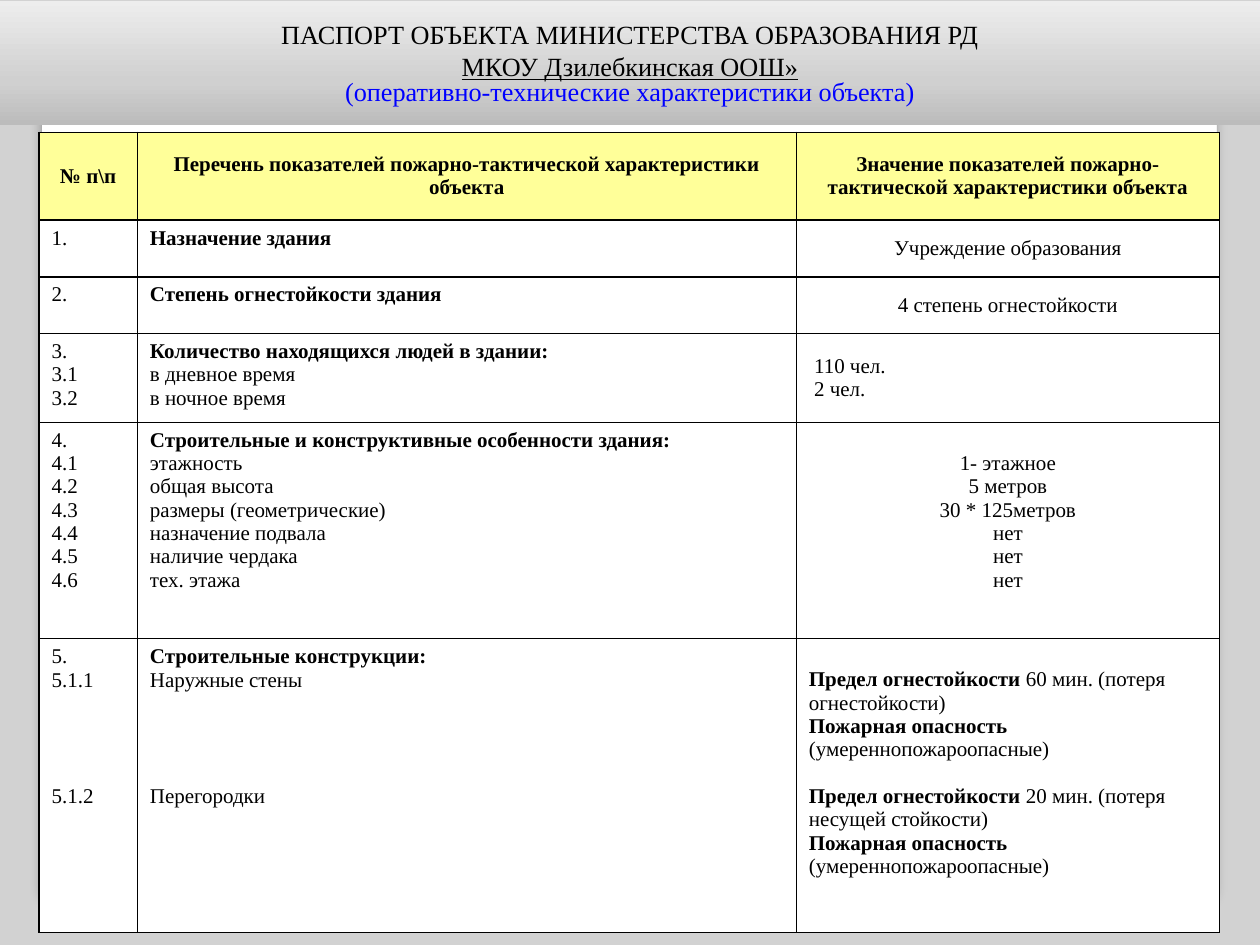
from pptx import Presentation
from pptx.dml.color import RGBColor
from pptx.enum.shapes import MSO_SHAPE
from pptx.enum.text import MSO_ANCHOR, PP_ALIGN
from pptx.oxml import parse_xml
from pptx.oxml.ns import nsdecls, qn
from pptx.util import Inches, Pt

BLACK = RGBColor(0, 0, 0)
WHITE = RGBColor(255, 255, 255)
BLUE = RGBColor(0, 0, 255)
YELLOW = RGBColor(255, 255, 153)
GREY = RGBColor(210, 210, 210)
EDGE = RGBColor(164, 164, 164)
PANEL = [(0, WHITE), (98, WHITE), (99, RGBColor(247, 247, 247)), (100, RGBColor(218, 218, 218))]
BAND = [(0, RGBColor(188, 188, 188)), (35, RGBColor(208, 208, 208)), (100, RGBColor(237, 237, 237))]
LEFT, MID, TOP = PP_ALIGN.LEFT, PP_ALIGN.CENTER, MSO_ANCHOR.TOP
CORE = MSO_ANCHOR.MIDDLE

COLS = [0.078, 0.523, 0.336]
ROWS = [
    (0.093, ["|№ п\\п"], ["|Перечень показателей пожарно-тактической характеристики объекта"],
     ["|Значение показателей пожарно-тактической характеристики объекта"], MID, CORE),
    (0.06, ["1."], ["|Назначение здания"], ["Учреждение образования"], MID, CORE),
    (0.06, ["2."], ["|Степень огнестойкости здания"], ["4 степень огнестойкости"], MID, CORE),
    (0.094, ["3.", "3.1", "3.2"],
     ["|Количество находящихся людей в здании:", "в дневное время", "в ночное время"],
     [" 110 чел.", " 2 чел."], LEFT, CORE),
    (0.229, ["4.", "4.1", "4.2", "4.3", "4.4", "4.5", "4.6"],
     ["|Строительные и конструктивные особенности здания:", "этажность", "общая высота",
      "размеры (геометрические)", "назначение подвала", "наличие чердака", "тех. этажа"],
     ["^1- этажное", "5 метров", "30 * 125метров", "нет", "нет", "нет"], MID, TOP),
    (0.311, ["5.", "5.1.1", "^^^^5.1.2"],
     ["|Строительные конструкции:", "Наружные стены", "^^^^Перегородки"],
     ["^|Предел огнестойкости |60 мин. (потеря огнестойкости)",
      "|Пожарная опасность |(умереннопожароопасные)",
      "^|Предел огнестойкости |20 мин. (потеря несущей стойкости)",
      "|Пожарная опасность", "(умереннопожароопасные)"], LEFT, TOP),
]


class Board:
    """Holds the style and the current slide; lengths are shares of the slide."""

    face = "Times New Roman"
    size = 12
    lead = 13.3

    def __init__(self):
        self.deck = Presentation()
        self.deck.slide_width, self.deck.slide_height = Inches(10), Inches(7.5)
        self.slide = self.deck.slides.add_slide(self.deck.slide_layouts[6])
        fill = self.slide.background.fill
        fill.solid()
        fill.fore_color.rgb = GREY

    def place(self, x, y, wide, high):
        w, h = self.deck.slide_width, self.deck.slide_height
        return int(x * w), int(y * h), int(wide * w), int(high * h)

    def style(self, item, form):
        for key, value in form.items():
            setattr(item, key, value)

    def words(self, para, text, size, tint=BLACK, line=False):
        for n, part in enumerate(text.split("|")):
            if part:
                run = para.add_run()
                run.text = part
                self.style(run.font, {"name": self.face, "size": Pt(size),
                                      "bold": n % 2 == 1, "underline": line})
                run.font.color.rgb = tint

    def box(self, kind, spot, stops, angle):
        shape = self.slide.shapes.add_shape(kind, *self.place(*spot))
        shape.shadow.inherit = False
        marks = "".join(f'<a:gs pos="{at * 1000}"><a:srgbClr val="{tint}"/></a:gs>' for at, tint in stops)
        shape._element.spPr.find(qn("a:prstGeom")).addnext(parse_xml(
            f'<a:gradFill {nsdecls("a")} rotWithShape="1"><a:gsLst>{marks}</a:gsLst>'
            f'<a:lin ang="{angle * 60000}" scaled="0"/></a:gradFill>'))
        shape.line.fill.background()
        return shape

    def panel(self, spot):
        shape = self.box(MSO_SHAPE.ROUNDED_RECTANGLE, spot, PANEL, 90)
        shape.adjustments[0] = 0.02
        shape.line.color.rgb = EDGE
        shape.line.width = Pt(0.16)
        shape._element.spPr.find(qn("a:effectLst")).append(parse_xml(
            f'<a:outerShdw {nsdecls("a")} blurRad="{Pt(6)}" dist="{Pt(4)}" dir="5400000">'
            '<a:srgbClr val="000000"><a:alpha val="25000"/></a:srgbClr></a:outerShdw>'))

    def title(self, spot, lines):
        frame = self.box(MSO_SHAPE.RECTANGLE, spot, BAND, 270).text_frame
        self.style(frame, {"word_wrap": True, "vertical_anchor": CORE})
        for n, (text, tint, line, pitch) in enumerate(lines):
            para = frame.add_paragraph() if n else frame.paragraphs[0]
            self.style(para, {"alignment": MID, "line_spacing": pitch})
            self.words(para, text, 15, tint, line)

    def cell(self, cell, lines, align, anchor, tint):
        cell.fill.solid()
        cell.fill.fore_color.rgb = tint
        self.style(cell, {"vertical_anchor": anchor,
                          "margin_left": Inches(0.1), "margin_right": Inches(0.1),
                          "margin_top": Inches(0.05), "margin_bottom": Inches(0.05)})
        for n, line in enumerate(lines):
            text = line.lstrip("^")
            gap = Pt(self.lead * (len(line) - len(text)))
            para = cell.text_frame.add_paragraph() if n else cell.text_frame.paragraphs[0]
            para.alignment = align
            if n:
                para.space_before = gap
            else:
                cell.margin_top += gap
            self.words(para, text, self.size)
        props = cell._tc.get_or_add_tcPr()
        for n, side in enumerate(("lnL", "lnR", "lnT", "lnB")):
            props.insert(n, parse_xml(
                f'<a:{side} {nsdecls("a")} w="{Pt(1)}"><a:solidFill><a:srgbClr val="{BLACK}"/>'
                f'</a:solidFill></a:{side}>'))

    def table(self, x, y, cols, rows):
        spot = self.place(x, y, sum(cols), sum(row[0] for row in rows))
        grid = self.slide.shapes.add_table(len(rows), len(cols), *spot).table
        for col, wide in zip(grid.columns, cols):
            col.width = int(wide * self.deck.slide_width)
        for r, (high, mark, name, value, align, anchor) in enumerate(rows):
            grid.rows[r].height = int(high * self.deck.slide_height)
            side = (LEFT, TOP) if r else (MID, CORE)
            tint = WHITE if r else YELLOW
            self.cell(grid.cell(r, 0), mark, *side, tint)
            self.cell(grid.cell(r, 1), name, *side, tint)
            self.cell(grid.cell(r, 2), value, align, anchor, tint)


def main():
    board = Board()
    board.panel((0.033, 0.048, 0.933, 0.904))
    board.table(0.031, 0.14, COLS, ROWS)
    board.title((0, 0.001, 1, 0.131), [
        ("ПАСПОРТ ОБЪЕКТА МИНИСТЕРСТВА ОБРАЗОВАНИЯ РД", BLACK, False, 1.0),
        ("МКОУ Дзилебкинская ООШ»", BLACK, True, 1.0),
        ("(оперативно-технические характеристики объекта)", BLUE, False, 0.8),
    ])
    board.deck.save("out.pptx")


if __name__ == "__main__":
    main()
